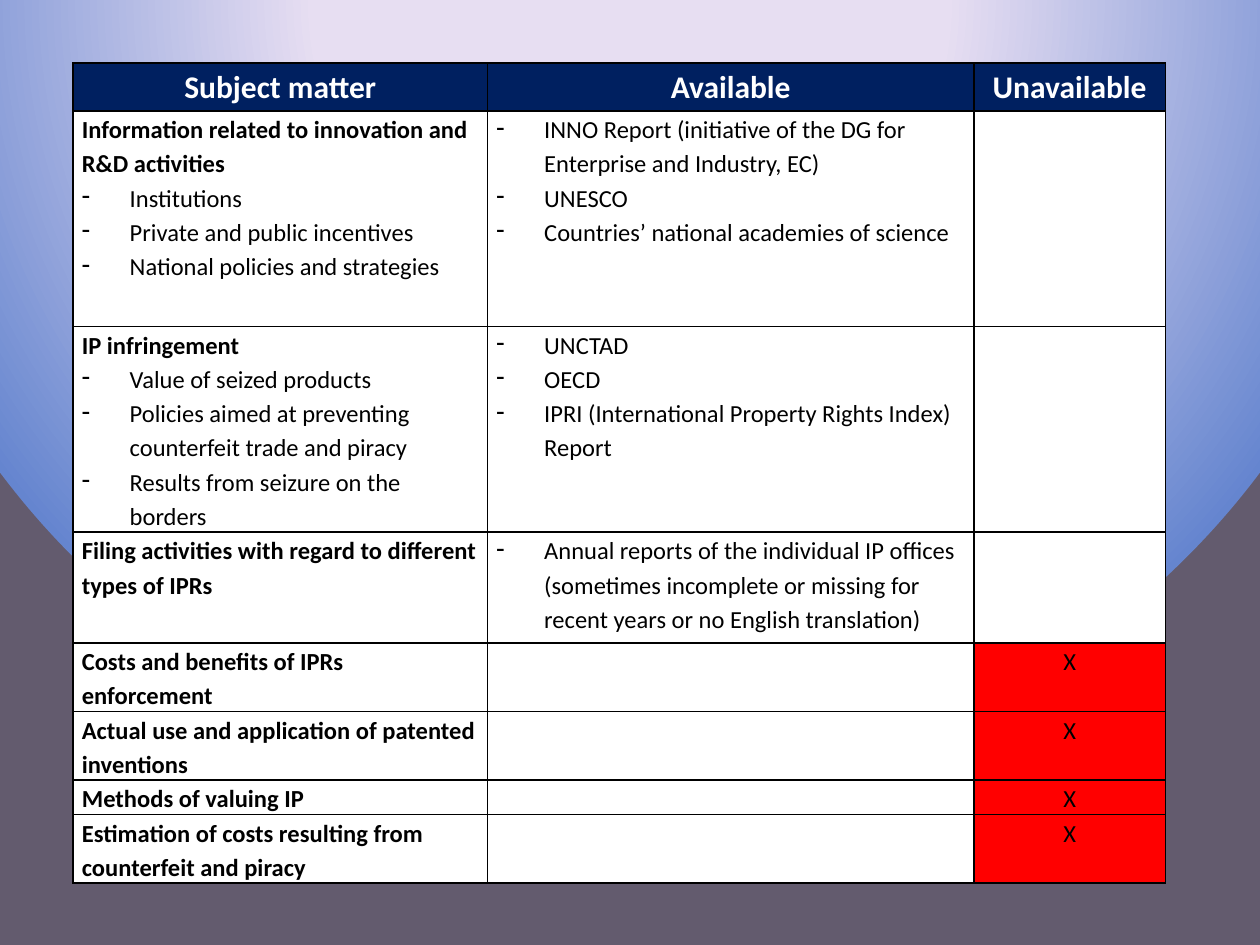
from lxml.etree import SubElement
from pptx import Presentation
from pptx.dml.color import RGBColor
from pptx.enum.text import PP_ALIGN
from pptx.oxml import parse_xml
from pptx.oxml.ns import nsdecls, qn
from pptx.util import Inches, Pt

COLORS = {"header": "002060", "white": "FFFFFF", "black": "000000", "red": "FF0000",
          "glow": "E7DEF2", "blue": "6585CF", "dusk": "635B6E"}
FONT = "Calibri"
HEADERS = ["Subject matter", "Available", "Unavailable"]
MARK = "X"
# (subject, its points, available sources, mark when unavailable)
ROWS = [
    ("Information related to innovation and R&D activities",
     ["Institutions", "Private and public incentives", "National policies and strategies"],
     ["INNO Report (initiative of the DG for Enterprise and Industry, EC)", "UNESCO",
      "Countries’ national academies of science"], ""),
    ("IP infringement",
     ["Value of seized products", "Policies aimed at preventing counterfeit trade and piracy",
      "Results from seizure on the borders"],
     ["UNCTAD", "OECD", "IPRI (International Property Rights Index) Report"], ""),
    ("Filing activities with regard to different types of IPRs", [],
     ["Annual reports of the individual IP offices (sometimes incomplete or missing "
      "for recent years or no English translation)"], ""),
    ("Costs and benefits of IPRs enforcement", [], [], MARK),
    ("Actual use and application of patented inventions", [], [], MARK),
    ("Methods of valuing IP", [], [], MARK),
    ("Estimation of costs resulting from counterfeit and piracy", [], [], MARK),
]
LEFT, TOP = 0.58, 0.5
COL_WIDTHS = [3.29, 3.86, 1.52]
ROW_HEIGHTS = [0.38, 1.71, 1.3, 0.88, 0.53, 0.53, 0.26, 0.53]
INDENT = Inches(0.38)


def set_background(slide):
    """Round gradient centred above the slide."""
    stops = [(40, "glow"), (100, "blue"), (100, "dusk")]
    gs = "".join(f'<a:gs pos="{pos * 1000}"><a:srgbClr val="{COLORS[name]}"/></a:gs>'
                 for pos, name in stops)
    slide.element.cSld.insert(0, parse_xml(
        f'<p:bg {nsdecls("p", "a")}><p:bgPr><a:gradFill rotWithShape="1"><a:gsLst>{gs}</a:gsLst>'
        '<a:path path="circle"><a:fillToRect l="50000" t="-80000" r="50000" b="180000"/></a:path>'
        '</a:gradFill><a:effectLst/></p:bgPr></p:bg>'))


def style_cell(cell, fill):
    cell.margin_left = cell.margin_right = Inches(0.07)
    cell.margin_top = cell.margin_bottom = 0
    tcPr = cell._tc.get_or_add_tcPr()
    for side in "LRTB":
        ln = SubElement(tcPr, qn(f"a:ln{side}"), w=str(Pt(1)))
        line_fill = SubElement(ln, qn("a:solidFill"))
        SubElement(line_fill, qn("a:srgbClr"), val=COLORS["black"])
    cell.fill.solid()
    cell.fill.fore_color.rgb = RGBColor.from_string(COLORS[fill])


def write_cell(cell, lines, size=14, color="black", centered=False):
    """Fill a cell with lines of (text, bold, bulleted)."""
    tf = cell.text_frame
    tf.text = "\n".join(text for text, _, _ in lines)
    for p, (text, bold, bulleted) in zip(tf.paragraphs, lines):
        p.line_spacing = 1.15
        if centered:
            p.alignment = PP_ALIGN.CENTER
        if bulleted:
            pPr = p._p.get_or_add_pPr()
            pPr.set("marL", str(INDENT))
            pPr.set("indent", str(-INDENT))
            SubElement(pPr, qn("a:buFontTx"))
            SubElement(pPr, qn("a:buChar"), char="-")
        for r in p.runs:
            r.font.name, r.font.size, r.font.bold = FONT, Pt(size), bold
            r.font.color.rgb = RGBColor.from_string(COLORS[color])
    if not lines:
        # keeps an empty cell from stretching its row
        SubElement(tf.paragraphs[0]._p, qn("a:endParaRPr"), sz=str(size * 100))


def add_table(slide):
    table = slide.shapes.add_table(
        len(ROW_HEIGHTS), len(COL_WIDTHS), Inches(LEFT), Inches(TOP),
        Inches(sum(COL_WIDTHS)), Inches(sum(ROW_HEIGHTS))).table
    for column, width in zip(table.columns, COL_WIDTHS):
        column.width = Inches(width)
    for row, height in zip(table.rows, ROW_HEIGHTS):
        row.height = Inches(height)

    for c, header in enumerate(HEADERS):
        style_cell(table.cell(0, c), "header")
        write_cell(table.cell(0, c), [(header, True, False)], 18, "white", True)
    for i, (subject, points, sources, mark) in enumerate(ROWS, 1):
        subject_cell, source_cell, mark_cell = table.rows[i].cells
        style_cell(subject_cell, "white")
        style_cell(source_cell, "white")
        style_cell(mark_cell, "red" if mark else "white")
        write_cell(subject_cell, [(subject, True, False)] + [(t, False, True) for t in points])
        write_cell(source_cell, [(t, False, True) for t in sources])
        write_cell(mark_cell, [(mark, False, False)] if mark else [], centered=True)


def main():
    prs = Presentation()
    prs.slide_width, prs.slide_height = Inches(10), Inches(7.5)
    slide = prs.slides.add_slide(prs.slide_layouts[6])
    set_background(slide)
    add_table(slide)
    prs.save("out.pptx")


if __name__ == "__main__":
    main()
